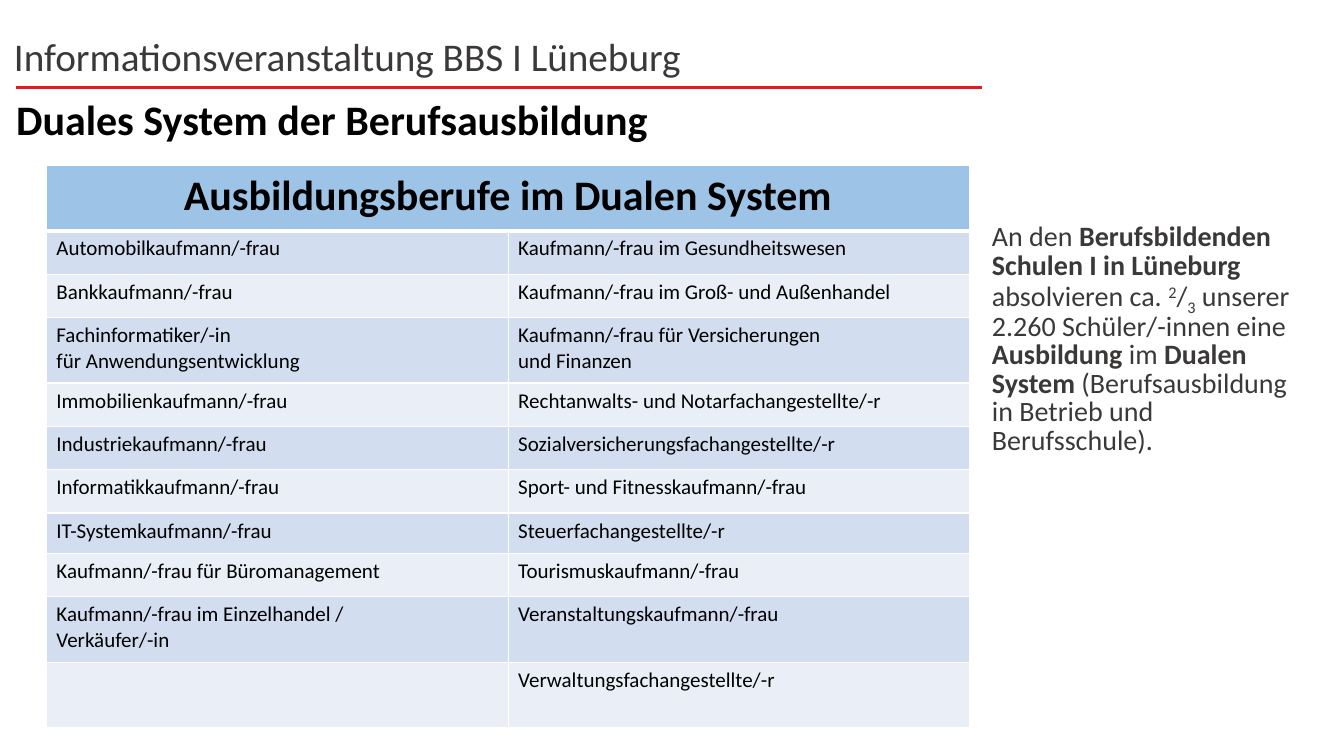
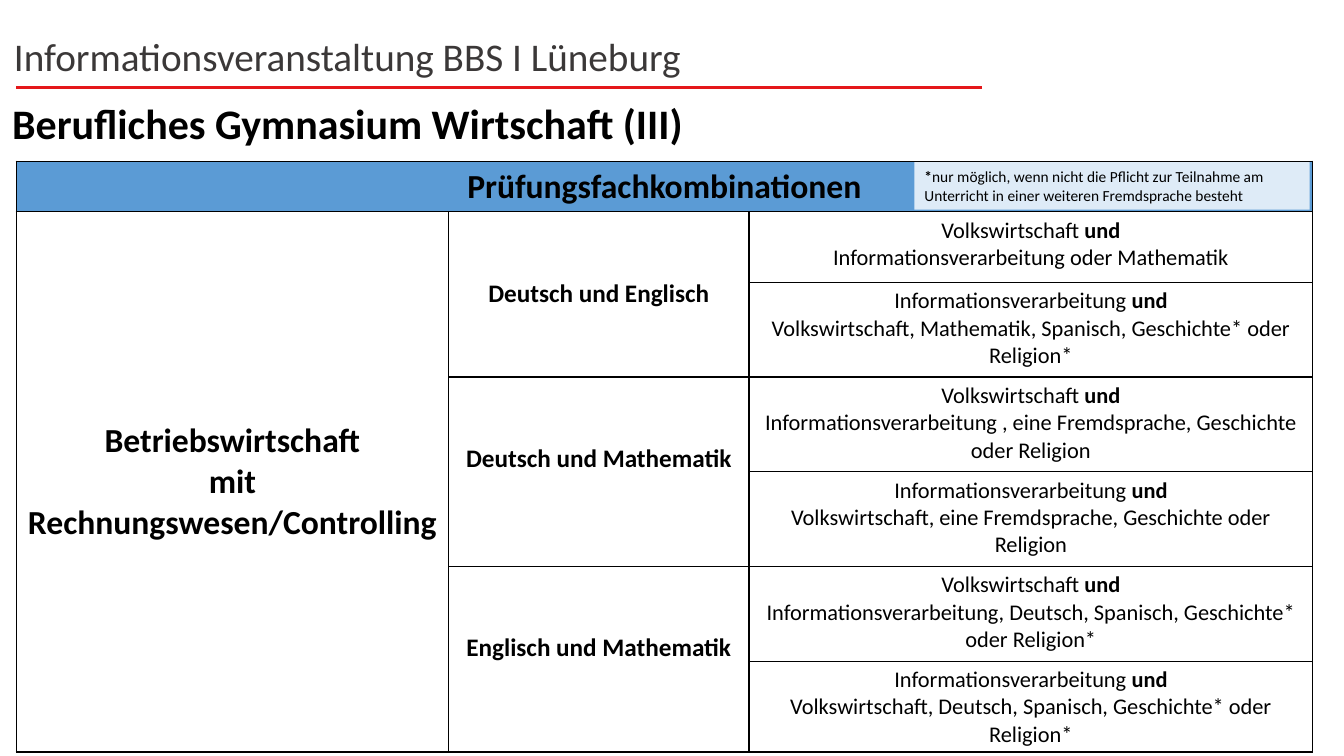
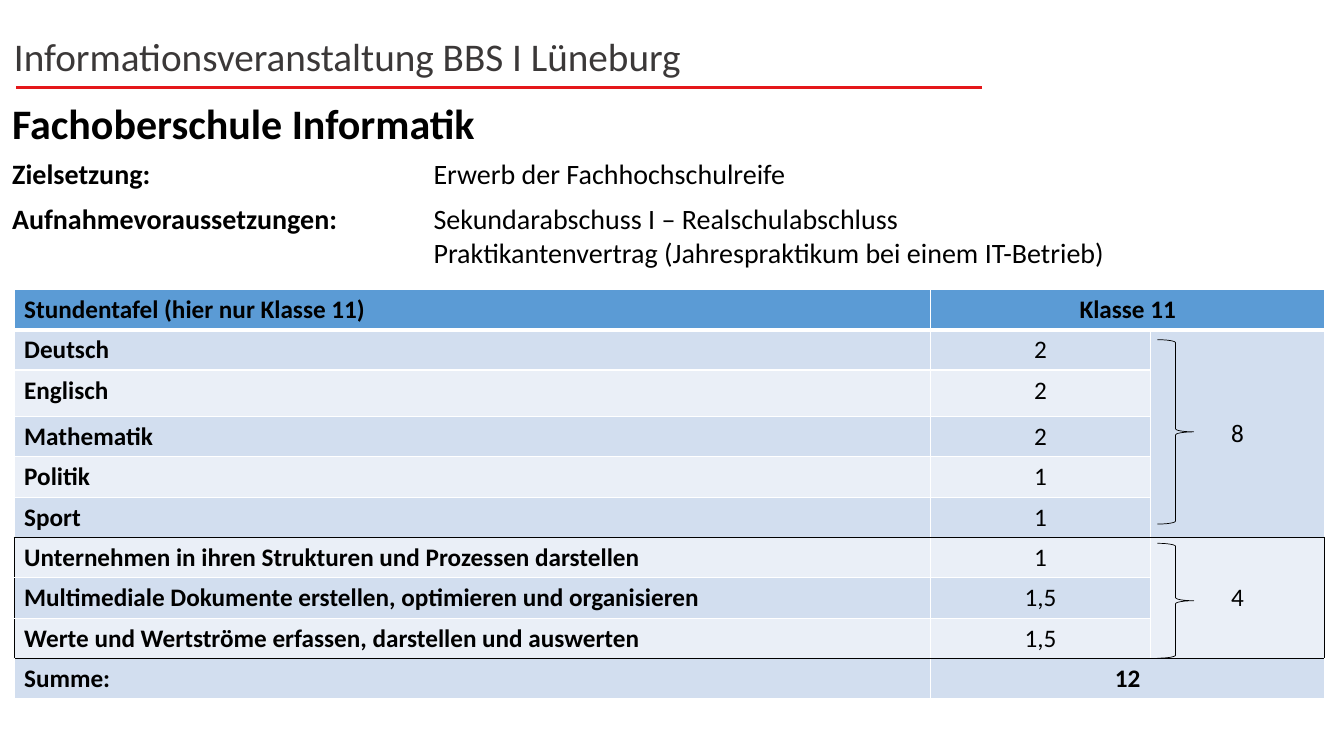
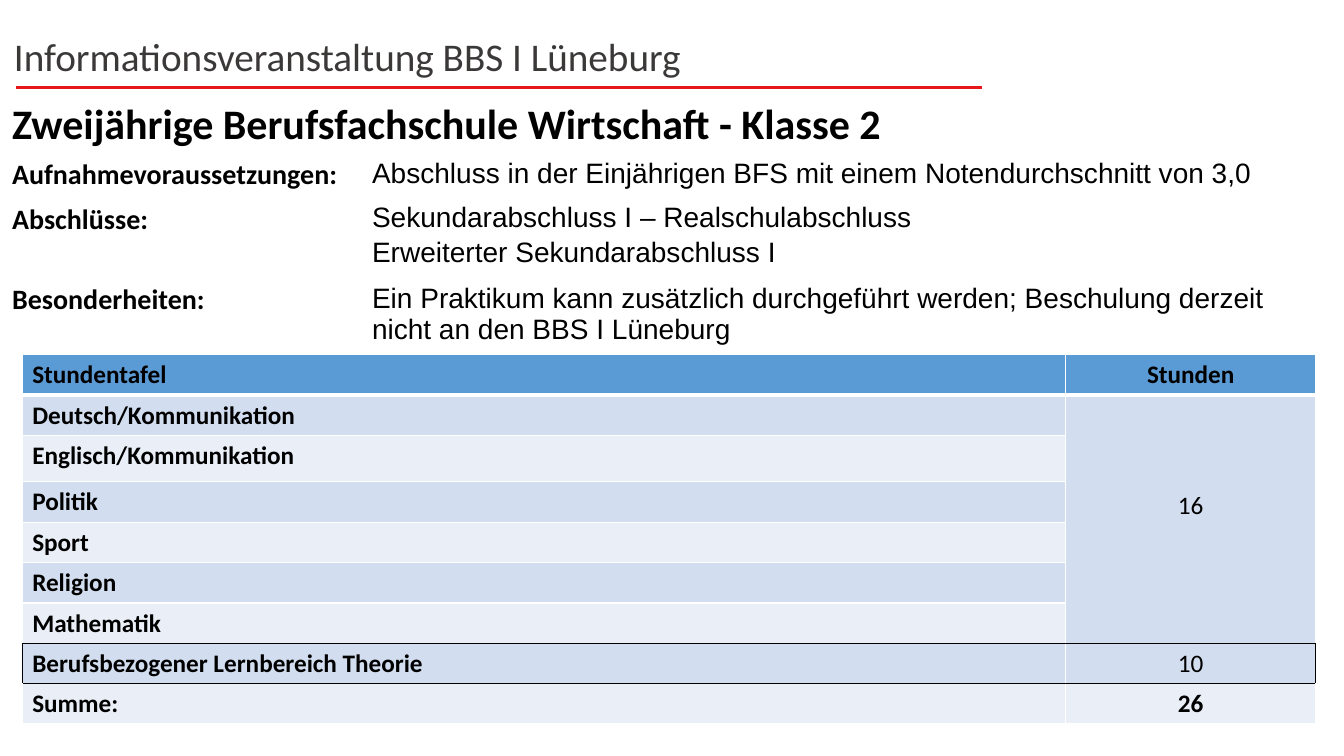
from dataclasses import dataclass

from pptx import Presentation, util as u
from pptx.dml.color import RGBColor
from pptx.enum import shapes, text
from pptx.oxml import parse_xml
from pptx.oxml.ns import nsdecls, qn

BLACK, WHITE, GREY, RED = "000000", "FFFFFF", "3B3838", "E4171A"
BLUE, SKY, PALE = "5B9BD5", "9DC3E6", "DEEBF7"
BANDS = "EAEFF7", "D2DEEF"
ALIGN = {"l": text.PP_ALIGN.LEFT, "c": text.PP_ALIGN.CENTER}
SHIFT = {"^": "30000", "~": "-25000"}


def rgb(code):
    return RGBColor.from_string(code)


def place(at):
    return [u.Inches(n) for n in at]


@dataclass
class Col:
    wide: float
    size: int = 18
    bold: bool = False
    align: str = "l"
    font: str = "Calibri"


def write(frame, words, size, color=BLACK, bold=False, align="l",
          font="Calibri", pitch=None, gap=0):
    """Fill a frame: \\n splits paragraphs, | splits runs.

    A run may start with + (bold), ^ (raised) or ~ (lowered).
    """
    for n, line in enumerate(words.split("\n")):
        para = frame.add_paragraph() if n else frame.paragraphs[0]
        para.alignment = ALIGN[align]
        if pitch:
            para.line_spacing = pitch
        if n and gap:
            para.space_before = u.Pt(gap)
        face = para.font
        face.name, face.size, face.bold = font, u.Pt(size), bold
        face.color.rgb = rgb(color)
        for part in line.split("|"):
            run = para.add_run()
            tag = part[:1]
            run.text = part[1:] if tag in ("+", "^", "~") else part
            if tag == "+":
                run.font.bold = True
            elif tag in SHIFT:
                run._r.get_or_add_rPr().set("baseline", SHIFT[tag])


def edge(cell, base):
    """Give a cell four border lines, the bottom one of width base."""
    props = cell._tc.get_or_add_tcPr()
    for n, side in enumerate("LRTB"):
        wide = u.Pt(base if side == "B" else 1)
        props.insert(n, parse_xml(
            f'<a:ln{side} {nsdecls("a")} w="{wide}"><a:solidFill>'
            f'<a:srgbClr val="{WHITE}"/></a:solidFill></a:ln{side}>'))


def ink(cell, side, color=BLACK):
    for mark in cell._tc.tcPr.xpath(f"a:ln{side}//a:srgbClr"):
        mark.set("val", color)


def outline(table, top, low):
    """Draw a black frame around the rows top to low."""
    last = len(table.columns) - 1
    for col in range(last + 1):
        ink(table.cell(top - 1, col), "B")
        ink(table.cell(top, col), "T")
        ink(table.cell(low, col), "B")
        ink(table.cell(low + 1, col), "T")
    for row in range(top, low + 1):
        ink(table.cell(row, 0), "L")
        ink(table.cell(row, last), "R")


def middle(cell):
    cell.vertical_anchor = text.MSO_ANCHOR.MIDDLE


class Deck:
    def __init__(self):
        self.show = Presentation()
        self.show.slide_width = u.Inches(13.33)
        self.show.slide_height = u.Inches(7.5)
        self.page = None

    def slide(self, name, at=(0.02, 0.98, 13.22, 0.54)):
        layout = self.show.slide_layouts[5]
        self.page = self.show.slides.add_slide(layout).shapes
        title = self.page.title
        title.left, title.top, title.width, title.height = place(at)
        frame = title.text_frame
        frame.auto_size = text.MSO_AUTO_SIZE.NONE
        frame.vertical_anchor = text.MSO_ANCHOR.BOTTOM
        write(frame, name, 30, bold=True, pitch=0.9)
        self.label((0.04, 0.27, 9.35, 0.57),
                   "Informationsveranstaltung BBS I Lüneburg", 28)
        self.rule((9.74, 0.87, 0.16, 0.87))

    def label(self, at, words, size, pitch=None):
        frame = self.page.add_textbox(*place(at)).text_frame
        frame.word_wrap = True
        write(frame, words, size, GREY, pitch=pitch)

    def rule(self, ends):
        line = self.page.add_connector(
            shapes.MSO_CONNECTOR.STRAIGHT, *place(ends))
        line.line.color.rgb = rgb(RED)
        line.line.width = u.Pt(2.25)
        line._element.spPr.append(
            parse_xml(f'<a:effectLst {nsdecls("a")}/>'))

    def note(self, at, words):
        box = self.page.add_shape(shapes.MSO_SHAPE.RECTANGLE, *place(at))
        box.shadow.inherit = False
        box.fill.solid()
        box.fill.fore_color.rgb = rgb(PALE)
        box.line.fill.background()
        box.text_frame.word_wrap = True
        box.text_frame.vertical_anchor = text.MSO_ANCHOR.TOP
        write(box.text_frame, words, 11)

    def brace(self, at):
        mark = self.page.add_shape(shapes.MSO_SHAPE.RIGHT_BRACE, *place(at))
        mark.shadow.inherit = False
        mark.fill.background()
        mark.line.color.rgb = rgb(BLACK)
        mark.line.width = u.Pt(0.5)

    def table(self, spot, cols, highs, rows, head=None, size=18,
              bands=BANDS, merge=(), gap=0):
        """Add a table; head is the fill of the first row, if it is one."""
        at = (*spot, sum(col.wide for col in cols), sum(highs))
        grid = self.page.add_table(len(highs), len(cols), *place(at)).table
        grid.first_row = grid.horz_banding = False
        for n, col in enumerate(cols):
            grid.columns[n].width = u.Inches(col.wide)
        for r, high in enumerate(highs):
            grid.rows[r].height = u.Inches(high)
            top = bool(head) and r == 0
            for c, col in enumerate(cols):
                cell = grid.cell(r, c)
                edge(cell, 3 if top else 1)
                if bands:
                    cell.fill.solid()
                    cell.fill.fore_color.rgb = rgb(head if top else bands[r % 2])
                else:
                    cell.fill.background()
                words = rows[r][c] if c < len(rows[r]) else ""
                if words:
                    write(cell.text_frame, words, size if top else col.size,
                          bold=top or col.bold, align=col.align,
                          font=col.font, gap=gap)
        for r, c, low, right in merge:
            grid.cell(r, c).merge(grid.cell(low, right))
        return grid


def jobs(deck):
    deck.slide("Duales System der Berufsausbildung", (0.06, 0.91, 13.22, 0.57))
    deck.label((9.74, 2.17, 3.23, 2.9),
               "An den |+Berufsbildenden Schulen I in Lüneburg |"
               "absolvieren ca. |^2|/|~3| unserer 2.260 Schüler/-innen eine |"
               "+Ausbildung| im |+Dualen System |"
               "(Berufsausbildung in Betrieb und Berufsschule).", 20, 0.85)
    rows = [
        ("Ausbildungsberufe im Dualen System",),
        ("Automobilkaufmann/-frau", "Kaufmann/-frau im Gesundheitswesen"),
        ("Bankkaufmann/-frau", "Kaufmann/-frau im Groß- und Außenhandel"),
        ("Fachinformatiker/-in\nfür Anwendungsentwicklung",
         "Kaufmann/-frau für Versicherungen\nund Finanzen"),
        ("Immobilienkaufmann/-frau",
         "Rechtanwalts- und Notarfachangestellte/-r"),
        ("Industriekaufmann/-frau", "Sozialversicherungsfachangestellte/-r"),
        ("Informatikkaufmann/-frau", "Sport- und Fitnesskaufmann/-frau"),
        ("IT-Systemkaufmann/-frau", "Steuerfachangestellte/-r"),
        ("Kaufmann/-frau für Büromanagement", "Tourismuskaufmann/-frau"),
        ("Kaufmann/-frau im Einzelhandel /\nVerkäufer/-in",
         "Veranstaltungskaufmann/-frau"),
        ("", "Verwaltungsfachangestellte/-r"),
    ]
    highs = [0.65, 0.43, 0.43, 0.65, 0.43, 0.43, 0.43, 0.4, 0.43, 0.65, 0.65]
    grid = deck.table((0.46, 1.64), [Col(4.58, 15)] * 2, highs, rows,
                      SKY, 30, merge=[(0, 0, 0, 1)])
    grid.cell(0, 0).text_frame.paragraphs[0].alignment = ALIGN["c"]


def exams(deck):
    deck.slide("Berufliches Gymnasium Wirtschaft (III)")
    eco, info = "Volkswirtschaft |+und\n", "Informationsverarbeitung |+und\n"
    rows = [
        ("Prüfungsfachkombinationen",),
        ("Betriebswirtschaft\nmit Rechnungswesen/Controlling",
         "Deutsch und Englisch",
         eco + "Informationsverarbeitung oder Mathematik"),
        ("", "", info + "Volkswirtschaft, Mathematik, Spanisch, "
                        "Geschichte* oder Religion*"),
        ("", "Deutsch und Mathematik",
         eco + "Informationsverarbeitung , eine Fremdsprache, "
               "Geschichte oder Religion"),
        ("", "", info + "Volkswirtschaft, eine Fremdsprache, "
                        "Geschichte oder Religion"),
        ("", "Englisch und Mathematik",
         eco + "Informationsverarbeitung, Deutsch, Spanisch, "
               "Geschichte* oder Religion*"),
        ("", "", info + "Volkswirtschaft, Deutsch, Spanisch, "
                        "Geschichte* oder Religion*"),
    ]
    cols = [Col(4.29, 24, True, "c"), Col(2.98, 18, True, "c"),
            Col(5.59, 16, False, "c")]
    pairs = [(r, 1, r + 1, 1) for r in (1, 3, 5)]
    grid = deck.table((0.16, 1.6), cols, [0.5, 0.7] + [0.94] * 4 + [0.9],
                      rows, BLUE, 24, (WHITE, WHITE),
                      [(0, 0, 0, 2), (1, 0, 6, 0)] + pairs)
    for cell in grid.iter_cells():
        for side in "LRTB":
            ink(cell, side)
        cell._tc.tcPr.find(qn("a:lnB")).set("w", str(u.Pt(1)))
    middle(grid.cell(1, 0))
    for r, c, *_ in pairs:
        grid.cell(r, c).margin_top = u.Inches(0.66)
    deck.note((9.07, 1.61, 3.92, 0.47),
              "+*|nur möglich, wenn nicht die Pflicht zur Teilnahme am "
              "Unterricht in einer weiteren Fremdsprache besteht")


def tech(deck):
    deck.slide("Fachoberschule Informatik")
    deck.table((0.02, 1.52), [Col(4.18, 20, True), Col(8.92, 20)],
               [0.44, 0.78], [
        ("Zielsetzung:", "Erwerb der Fachhochschulreife"),
        ("Aufnahmevoraussetzungen:",
         "Sekundarabschuss I – Realschulabschluss\n"
         "Praktikantenvertrag (Jahrespraktikum bei einem IT-Betrieb)"),
    ], bands=None)
    rows = [
        ("Stundentafel (hier nur Klasse 11)", "Klasse 11"),
        ("Deutsch", "2", "8"),
        ("Englisch", "2"),
        ("Mathematik", "2"),
        ("Politik", "1"),
        ("Sport", "1"),
        ("Unternehmen in ihren Strukturen und Prozessen darstellen", "1", "4"),
        ("Multimediale Dokumente erstellen, optimieren und organisieren",
         "1,5"),
        ("Werte und Wertströme erfassen, darstellen und auswerten", "1,5"),
        ("Summe:", "+12"),
    ]
    cols = [Col(9.09, bold=True), Col(2.18, align="c"), Col(1.73, align="c")]
    grid = deck.table((0.14, 2.87), cols, [0.4, 0.4, 0.46] + [0.4] * 7, rows,
                      BLUE, merge=[(0, 1, 0, 2), (1, 2, 5, 2),
                                   (6, 2, 8, 2), (9, 1, 9, 2)])
    outline(grid, 6, 8)
    for r in (1, 6):
        middle(grid.cell(r, 2))
    ink(grid.cell(1, 2), "B")
    ink(grid.cell(6, 2), "B")
    deck.brace((11.48, 3.37, 0.36, 1.83))
    deck.brace((11.48, 5.39, 0.36, 1.14))


def trade(deck):
    deck.slide("Zweijährige Berufsfachschule Wirtschaft - Klasse 2")
    deck.table((0.02, 1.52), [Col(3.57, 20, True), Col(9.53, 20, font="Arial")],
               [0.44, 0.75, 0.75], [
        ("Aufnahmevoraussetzungen:",
         "Abschluss in der Einjährigen BFS mit einem Notendurchschnitt "
         "von 3,0"),
        ("Abschlüsse:", "Sekundarabschluss I – Realschulabschluss\n"
                        "Erweiterter Sekundarabschluss I"),
        ("Besonderheiten:",
         "Ein Praktikum kann zusätzlich durchgeführt werden; Beschulung "
         "derzeit nicht an den BBS I Lüneburg"),
    ], bands=None, gap=2)
    rows = [
        ("Stundentafel", "Stunden"),
        ("Deutsch/Kommunikation", "16"),
        ("Englisch/Kommunikation",),
        ("Politik",),
        ("Sport",),
        ("Religion",),
        ("Mathematik",),
        ("Berufsbezogener Lernbereich Theorie", "10"),
        ("Summe:", "+26"),
    ]
    grid = deck.table((0.22, 3.52), [Col(10.35, bold=True), Col(2.48, align="c")],
                      [0.4, 0.4, 0.46] + [0.4] * 6, rows, BLUE,
                      merge=[(1, 1, 6, 1)])
    outline(grid, 7, 7)
    ink(grid.cell(1, 1), "B")
    grid.cell(1, 1).margin_top = u.Inches(0.95)


def main():
    deck = Deck()
    for make in (jobs, exams, tech, trade):
        make(deck)
    deck.show.save("out.pptx")


if __name__ == "__main__":
    main()
